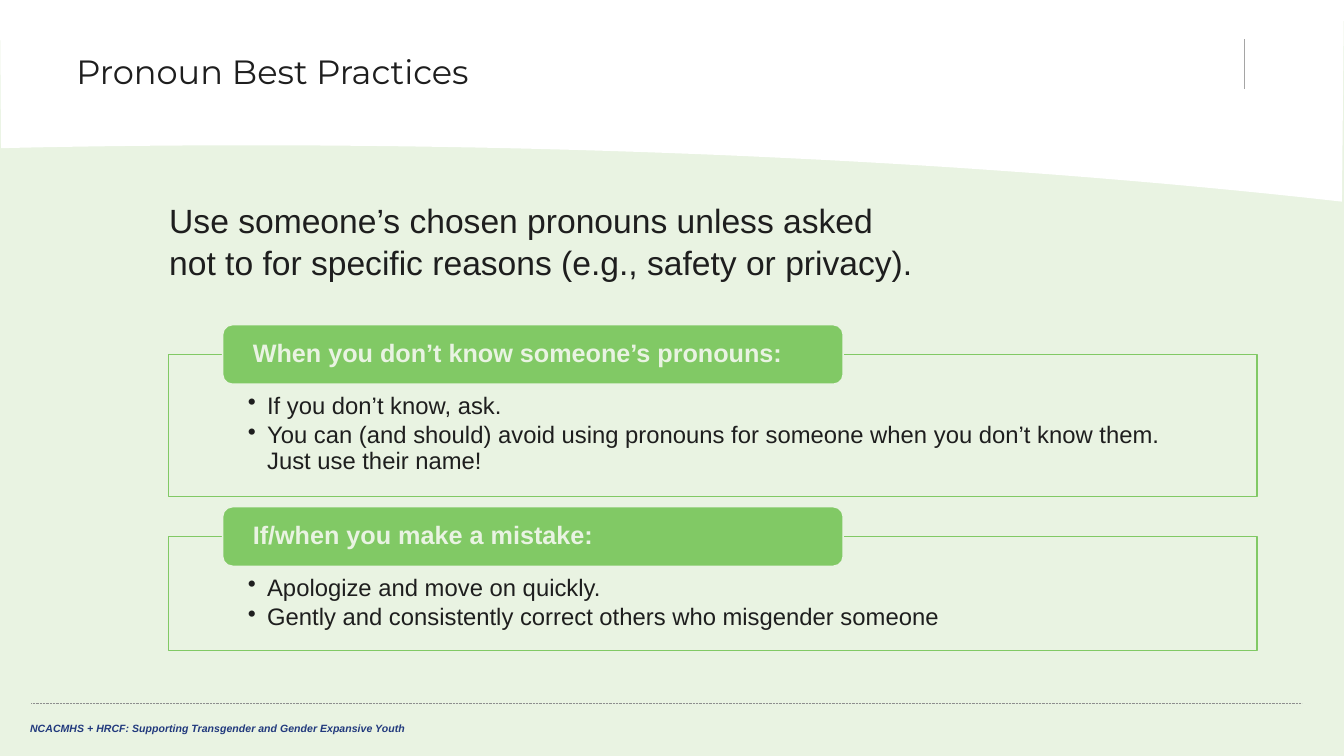
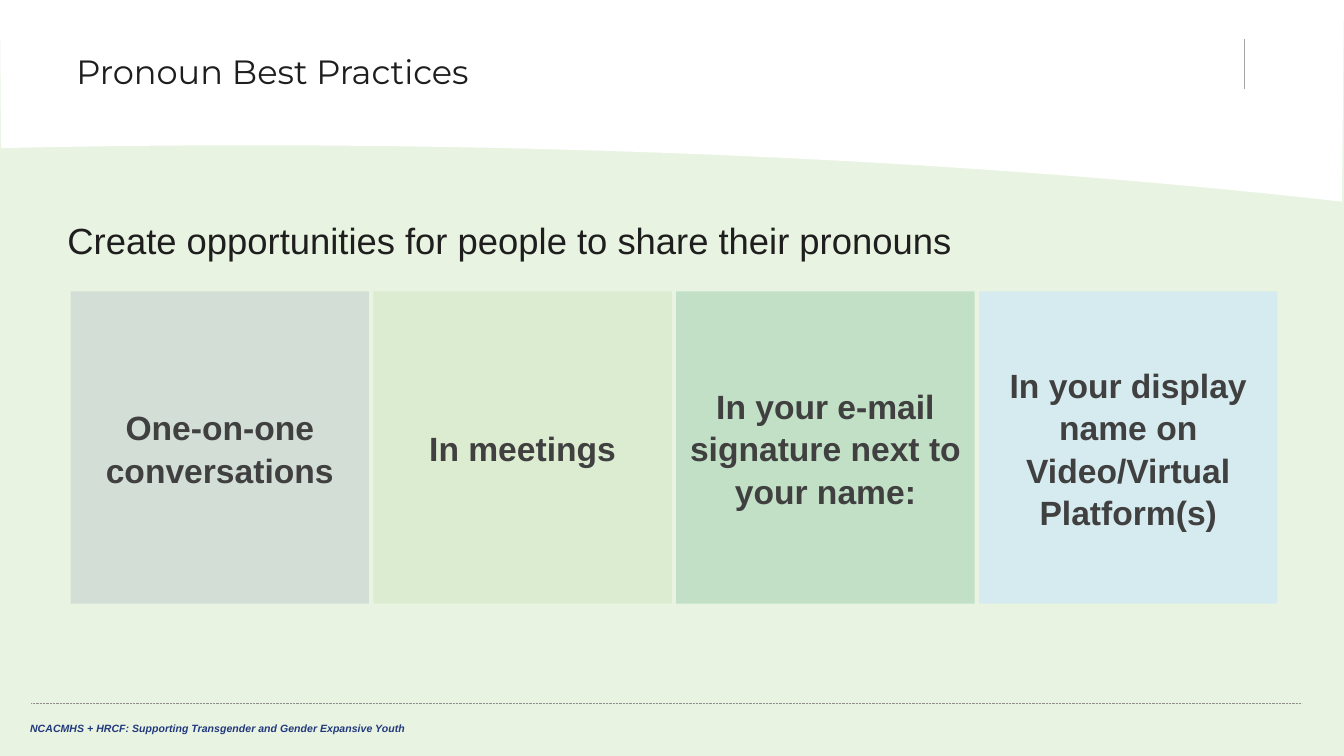
"""Build two slides on pronoun best practices."""
from dataclasses import dataclass

from lxml.etree import SubElement
from pptx import Presentation
from pptx.dml.color import RGBColor as Rgb
from pptx.enum.dml import MSO_LINE_DASH_STYLE as Dash
from pptx.enum.shapes import MSO_CONNECTOR as Connector, MSO_SHAPE as Shape
from pptx.enum.text import MSO_ANCHOR as Anchor, PP_ALIGN as Align
from pptx.oxml.ns import qn
from pptx.util import Inches, Pt


@dataclass(frozen=True)
class Style:
    """Type size, colour and face of one kind of text."""
    size: float
    color: str
    name: str = "Arial"
    bold: bool = False
    italic: bool = False


class Theme:
    """Colours, type styles and measures shared by the slides."""
    mint, white, green = "E9F3E2", "FFFFFF", "81C965"
    rule, tick = "8E8E8E", "A5A5A5"
    title = Style(24, "1E1E1E", "Montserrat")
    lead = Style(24, "1E1E1E")
    wide_lead = Style(26, "1E1E1E")
    tab = Style(18, mint, bold=True)
    bullet = Style(17, "1E1E1E")
    tile = Style(24, "404040", bold=True)
    footer = Style(7.5, "21397D", bold=True, italic=True)
    insets = (0.1, 0.05, 0.1, 0.05)
    tight, loose = 0.9, 1.05


@dataclass(frozen=True)
class Box:
    """A region of the slide, divisible into percentages and columns."""
    left: int
    top: int
    width: int
    height: int

    def point(self, across, down):
        """Return the position at the given percentages."""
        return (round(self.left + self.width * across / 100),
                round(self.top + self.height * down / 100))

    def area(self, left, top, width, height):
        """Return the sub-region at the given percentages."""
        return Box(*self.point(left, top), round(self.width * width / 100),
                   round(self.height * height / 100))

    def columns(self, count, gap):
        """Return equal columns with a gap given as a percentage."""
        width = (100 - gap * (count - 1)) / count
        return [self.area(i * (width + gap), 0, width, 100) for i in range(count)]

    @property
    def frame(self):
        """Return left, top, width and height."""
        return self.left, self.top, self.width, self.height


PAGE = Box(0, 0, Inches(13.33), Inches(7.5))


def assign(target, values):
    """Set each named value on the target."""
    for name, value in values.items():
        setattr(target, name, value)


def write(shape, lines, style, spacing=1.0, insets=Theme.insets,
          anchor=Anchor.TOP, align=Align.LEFT, bullets=False):
    """Fill a shape with styled paragraphs."""
    frame = shape.text_frame
    sides = ("margin_left", "margin_top", "margin_right", "margin_bottom")
    assign(frame, dict(zip(sides, map(Inches, insets)),
                       word_wrap=True, vertical_anchor=anchor))
    for index, line in enumerate(lines):
        paragraph = frame.add_paragraph() if index else frame.paragraphs[0]
        if bullets:
            properties = paragraph._p.get_or_add_pPr()
            properties.set("marL", str(Inches(0.19)))
            properties.set("indent", str(Inches(-0.19)))
            SubElement(properties, qn("a:buChar")).set("char", "•")
        assign(paragraph, {"alignment": align, "line_spacing": spacing})
        if index:
            paragraph.space_before = Pt(2.5)
        run = paragraph.add_run()
        run.text = line
        assign(run.font, {"size": Pt(style.size), "name": style.name,
                          "bold": style.bold, "italic": style.italic})
        run.font.color.rgb = Rgb.from_string(style.color)


def add_text(slide, box, text, style, **options):
    """Place a text box holding one paragraph."""
    write(slide.shapes.add_textbox(*box.frame), [text], style, **options)


def paint(shape, fill, line=None, opacity=100):
    """Give a shape its fill, outline and opacity without a shadow."""
    shape.shadow.inherit = False
    shape.fill.solid()
    shape.fill.fore_color.rgb = Rgb.from_string(fill)
    if opacity < 100:
        color = shape._element.spPr.find(qn("a:solidFill"))[0]
        SubElement(color, qn("a:alpha")).set("val", str(opacity * 1000))
    if line:
        shape.line.color.rgb = Rgb.from_string(line)
        shape.line.width = Pt(1)
    else:
        shape.line.fill.background()


def add_rule(slide, start, end, color, dash=None):
    """Draw a hairline between two points."""
    rule = slide.shapes.add_connector(Connector.STRAIGHT, *start, *end)
    rule.line.color.rgb = Rgb.from_string(color)
    assign(rule.line, {"width": Pt(0.5), "dash_style": dash})
    SubElement(rule._element.spPr, qn("a:effectLst"))


def bezier(points, steps=48):
    """Sample a cubic curve after its first point."""
    for step in range(1, steps + 1):
        t = step / steps
        weights = ((1 - t) ** 3, 3 * t * (1 - t) ** 2, 3 * t * t * (1 - t), t ** 3)
        yield tuple(sum(w * p[axis] for w, p in zip(weights, points))
                    for axis in (0, 1))


def add_header(slide, box, title):
    """Draw the curved white band, its title and its tick."""
    edge = [(99.85, 100), (57.16, 68), (15.53, 71), (0.08, 73.5)]
    outline = [(100, 0), edge[0], *bezier(edge)]
    builder = slide.shapes.build_freeform(*box.point(0, 0))
    builder.add_line_segments([box.point(*p) for p in outline], close=True)
    paint(builder.convert_to_shape(), Theme.white)
    add_rule(slide, box.point(92.57, 19.5), box.point(92.57, 44), Theme.tick)
    add_text(slide, box.area(4.95, 0, 84.85, 73.5), title, Theme.title,
             spacing=Theme.tight, anchor=Anchor.MIDDLE)


def add_footer(slide, box):
    """Draw the dotted rule and the footer line."""
    add_rule(slide, box.point(2.33, 0), box.point(96.85, 0), Theme.rule,
             Dash.ROUND_DOT)
    add_text(slide, box.area(1.5, 25, 50.4, 44),
             "NCACMHS + HRCF: Supporting Transgender and Gender Expansive Youth",
             Theme.footer)


def add_section(slide, box, heading, points):
    """Draw an outlined list with a tab straddling its top edge."""
    tab_height = Inches(0.59)
    half = tab_height // 2
    panel = slide.shapes.add_shape(Shape.RECTANGLE, box.left, box.top + half,
                                   box.width, box.height - half)
    paint(panel, Theme.mint, Theme.green)
    write(panel, points, Theme.bullet, Theme.tight, (0.79, 0.39, 0.79, 0.13),
          bullets=True)
    left, top = box.point(5, 0)
    tab = slide.shapes.add_shape(Shape.ROUNDED_RECTANGLE, left, top,
                                 round(box.width * 0.57), tab_height)
    paint(tab, Theme.green, Theme.mint)
    write(tab, [heading], Theme.tab, Theme.tight, (0.27, 0, 0.27, 0),
          Anchor.MIDDLE)


def add_tiles(slide, box, tiles):
    """Draw a row of equal tinted tiles with centred labels."""
    for cell, (label, color, opacity) in zip(box.columns(len(tiles), 0.37), tiles):
        tile = slide.shapes.add_shape(Shape.RECTANGLE, *cell.frame)
        paint(tile, color, opacity=opacity)
        write(tile, [label], Theme.tile, Theme.loose, anchor=Anchor.MIDDLE,
              align=Align.CENTER)


def add_page(deck, title):
    """Add a blank slide with the shared header and footer."""
    slide = deck.slides.add_slide(deck.slide_layouts[6])
    add_header(slide, PAGE.area(0, 0, 100, 26.67), title)
    add_footer(slide, PAGE.area(0, 93.07, 100, 6.93))
    return slide


def add_sections_slide(deck, title, lead, sections):
    """Build a slide of stacked sections under a lead sentence."""
    slide = add_page(deck, title)
    top = 42.95
    for heading, points, height in sections:
        add_section(slide, PAGE.area(12.52, top, 81, height), heading, points)
        top += height + 1.33
    add_text(slide, PAGE.area(11.85, 25.47, 57.4, 17.47), lead, Theme.lead,
             spacing=Theme.loose)


def add_tiles_slide(deck, title, lead, tiles):
    """Build a slide of tiles under a lead sentence."""
    slide = add_page(deck, title)
    add_text(slide, PAGE.area(4.28, 27.87, 83.4, 10), lead, Theme.wide_lead,
             spacing=Theme.loose)
    add_tiles(slide, PAGE.area(5.25, 38.53, 89.8, 41.33), tiles)


def main():
    """Build and save the deck."""
    deck = Presentation()
    assign(deck, {"slide_width": PAGE.width, "slide_height": PAGE.height})
    backdrop = deck.slide_master.background.fill
    backdrop.solid()
    backdrop.fore_color.rgb = Rgb.from_string(Theme.mint)
    title = "Pronoun Best Practices"
    add_sections_slide(
        deck, title,
        "Use someone’s chosen pronouns unless asked not to for specific reasons "
        "(e.g., safety or privacy).",
        [("When you don’t know someone’s pronouns:",
          ["If you don’t know, ask.",
           "You can (and should) avoid using pronouns for someone when you "
           "don’t know them. Just use their name!"], 22.75),
         ("If/when you make a mistake:",
          ["Apologize and move on quickly.",
           "Gently and consistently correct others who misgender someone"], 19)])
    add_tiles_slide(
        deck, title, "Create opportunities for people to share their pronouns",
        [("One-on-one conversations", "21397D", 11),
         ("In meetings", "92C56E", 14),
         ("In your e-mail signature next to your name:", "1A8F52", 19),
         ("In your display name on Video/Virtual Platform(s)", "D6EBEF", 100)])
    deck.save("out.pptx")


if __name__ == "__main__":
    main()
